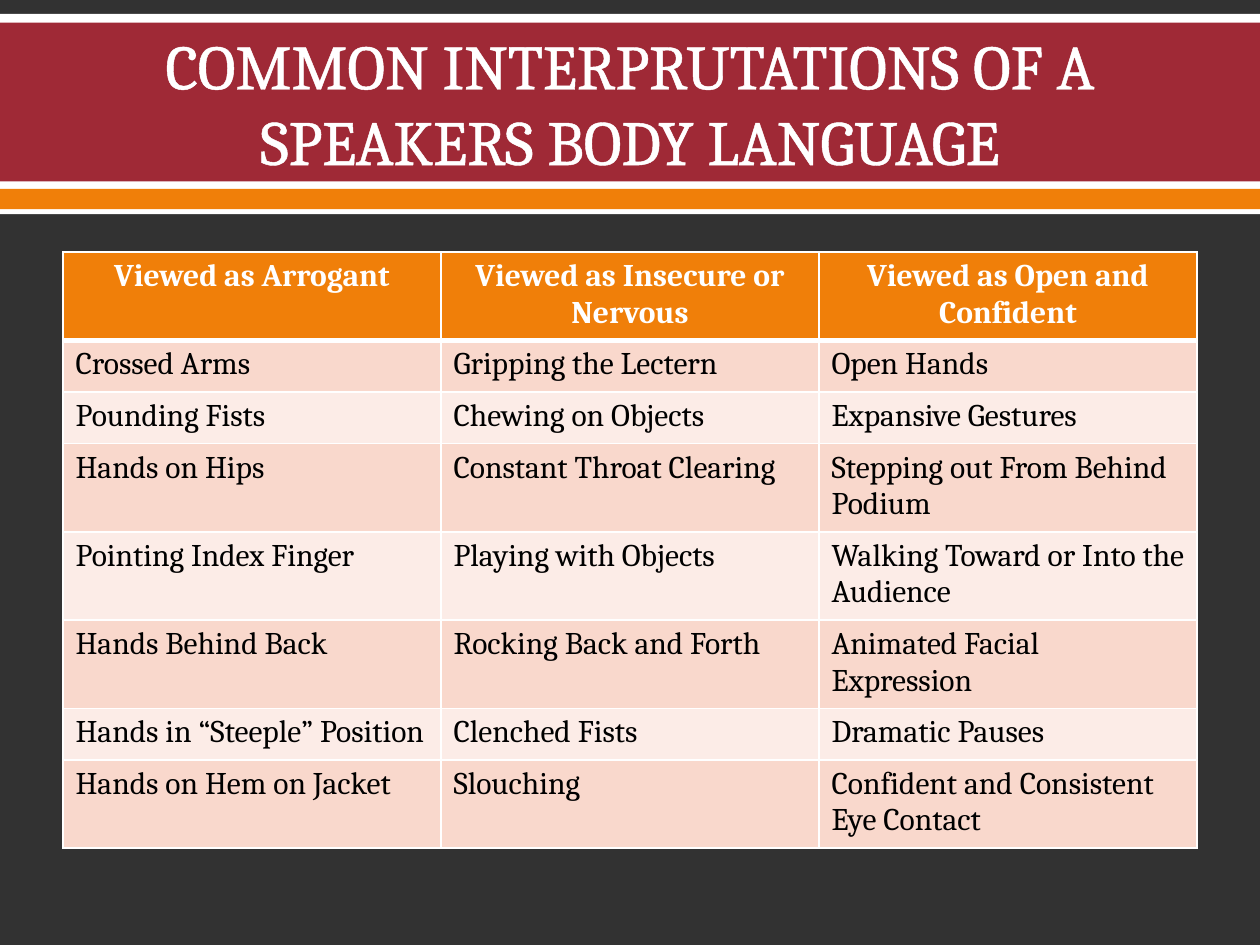
from lxml.etree import SubElement
from pptx import Presentation
from pptx.dml.color import RGBColor
from pptx.enum.shapes import MSO_SHAPE
from pptx.enum.text import MSO_ANCHOR, PP_ALIGN
from pptx.oxml.ns import qn
from pptx.util import Inches, Pt

THEME = {
    "font": "Cambria", "title": 36, "body": 18,
    "dark": "323232", "white": "FFFFFF", "black": "000000",
    "red": "9F2936", "orange": "F07F09", "bands": ("FCECE7", "F9D8CC"),
}

ROWS = [
    ("Viewed as Arrogant", "Viewed as Insecure or Nervous", "Viewed as Open and Confident"),
    ("Crossed Arms", "Gripping the Lectern", "Open Hands"),
    ("Pounding Fists", "Chewing on Objects", "Expansive Gestures"),
    ("Hands on Hips", "Constant Throat Clearing", "Stepping out From Behind Podium"),
    ("Pointing Index Finger", "Playing with Objects", "Walking Toward or Into the Audience"),
    ("Hands Behind Back", "Rocking Back and Forth", "Animated Facial Expression"),
    ("Hands in “Steeple” Position", "Clenched Fists", "Dramatic Pauses"),
    ("Hands on Hem on Jacket", "Slouching", "Confident and Consistent Eye Contact"),
]


def write(p, text, size, color, bold=False, align=PP_ALIGN.LEFT):
    r = p.add_run()
    r.text = text
    p.alignment = align
    p.font.name = THEME["font"]
    p.font.size = Pt(size)
    p.font.bold = bold
    p.font.color.rgb = RGBColor.from_string(color)
    return r


def add_line(parent, tag, width):
    ln = SubElement(parent, qn(tag), w=str(Pt(width)))
    fill = SubElement(ln, qn("a:solidFill"))
    SubElement(fill, qn("a:srgbClr"), val=THEME["white"])


prs = Presentation()
prs.slide_width, prs.slide_height = Inches(10), Inches(7.5)
s = prs.slides.add_slide(prs.slide_layouts[6])
s.background.fill.solid()
s.background.fill.fore_color.rgb = RGBColor.from_string(THEME["dark"])

for top, height, color in ((0.11, 1.59, "white"), (0.18, 1.26, "red"), (1.5, 0.16, "orange")):
    sp = s.shapes.add_shape(MSO_SHAPE.RECTANGLE, 0, Inches(top), prs.slide_width, Inches(height))
    sp.shadow.inherit = False
    sp.fill.solid()
    sp.fill.fore_color.rgb = RGBColor.from_string(THEME[color])
    sp.line.fill.background()

margin = Inches(0.5)
width = prs.slide_width - 2 * margin
tf = s.shapes.add_textbox(margin, Inches(0.2), width, Inches(1.22)).text_frame
tf.word_wrap = True
tf.vertical_anchor = MSO_ANCHOR.MIDDLE
r = write(tf.paragraphs[0], "COMMON INTERPRUTATIONS OF A SPEAKERS BODY LANGUAGE",
          THEME["title"], THEME["white"], align=PP_ALIGN.CENTER)
add_line(r.font._element, "a:ln", 1.1)

head, row = Inches(0.62), Inches(0.41)
table = s.shapes.add_table(len(ROWS), len(ROWS[0]), margin, Inches(2), width,
                           head + row * (len(ROWS) - 1)).table
for i, texts in enumerate(ROWS):
    header = i == 0
    table.rows[i].height = head if header else row
    for j, text in enumerate(texts):
        cell = table.cell(i, j)
        write(cell.text_frame.paragraphs[0], text, THEME["body"],
              THEME["white"] if header else THEME["black"], header,
              PP_ALIGN.CENTER if header else PP_ALIGN.LEFT)
        tcPr = cell._tc.get_or_add_tcPr()
        for side in "LRTB":
            thick = (side == "B" and header) or (side == "T" and i == 1)
            add_line(tcPr, f"a:ln{side}", 3 if thick else 1)
        cell.fill.solid()
        cell.fill.fore_color.rgb = RGBColor.from_string(
            THEME["orange"] if header else THEME["bands"][i % 2])

prs.save("out.pptx")
